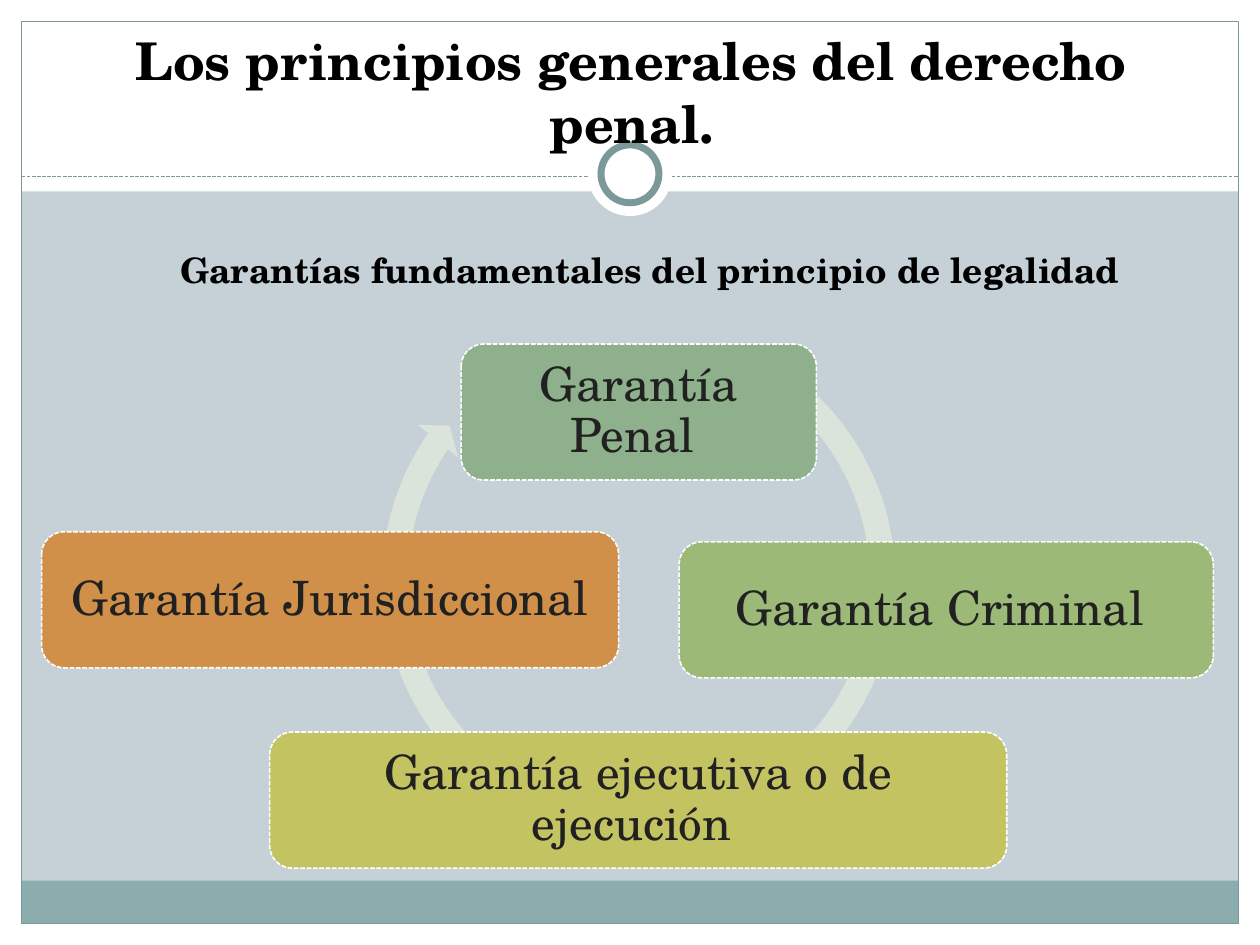
"""Build a slide on the guarantees of the principle of legality in criminal law."""
from pptx import Presentation
from pptx.dml.color import RGBColor
from pptx.enum.dml import MSO_LINE
from pptx.enum.shapes import MSO_CONNECTOR, MSO_SHAPE
from pptx.enum.text import MSO_ANCHOR, PP_ALIGN
from pptx.oxml.ns import qn
from pptx.util import Inches, Pt
from lxml.etree import SubElement

FONT = "TeX Gyre Schola"
WHITE = RGBColor(0xFF, 0xFF, 0xFF)
BLACK = RGBColor(0x00, 0x00, 0x00)
CHARCOAL = RGBColor(0x21, 0x21, 0x21)
BACKGROUND = RGBColor(0xC5, 0xD1, 0xD7)
BAND = RGBColor(0x8C, 0xAD, 0xAE)
FRAME = RGBColor(0x7C, 0x99, 0x9A)
CYCLE = RGBColor(0xDB, 0xE4, 0xDA)
GREEN = RGBColor(0x8F, 0xB0, 0x8C)
LIME = RGBColor(0x9C, 0xB9, 0x77)
OLIVE = RGBColor(0xC4, 0xC3, 0x61)
ORANGE = RGBColor(0xD1, 0x90, 0x49)


class SlideBuilder:
    def __init__(self, slide):
        self.slide = slide
        slide.background.fill.solid()
        slide.background.fill.fore_color.rgb = BACKGROUND

    def stroke(self, line, color, width, dash=None):
        line.color.rgb = color
        line.width = Pt(width)
        if dash:
            line.dash_style = dash

    def shape(self, kind, left, top, width, height, fill=None, line=None, dash=None):
        shape = self.slide.shapes.add_shape(
            kind, Inches(left), Inches(top), Inches(width), Inches(height))
        shape.shadow.inherit = False
        if fill is None:
            shape.fill.background()
        else:
            shape.fill.solid()
            shape.fill.fore_color.rgb = fill
        if line is None:
            shape.line.fill.background()
        else:
            self.stroke(shape.line, *line, dash)
        return shape

    def circle(self, center_x, center_y, diameter, line=None):
        radius = diameter / 2
        self.shape(MSO_SHAPE.OVAL, center_x - radius, center_y - radius,
                   diameter, diameter, WHITE, line)

    def dashed_line(self, left, right, y):
        connector = self.slide.shapes.add_connector(
            MSO_CONNECTOR.STRAIGHT, Inches(left), Inches(y), Inches(right), Inches(y))
        self.stroke(connector.line, FRAME, 0.75, MSO_LINE.SQUARE_DOT)
        SubElement(connector._element.spPr, qn("a:effectLst"))

    def add_text(self, frame, text, size, color, bold=False, anchor=MSO_ANCHOR.TOP):
        frame.word_wrap = True
        frame.vertical_anchor = anchor
        paragraph = frame.paragraphs[0]
        paragraph.alignment = PP_ALIGN.CENTER
        run = paragraph.add_run()
        run.text = text
        run.font.name = FONT
        run.font.size = Pt(size)
        run.font.bold = bold
        run.font.color.rgb = color
        return paragraph

    def heading(self, text, left, top, width, height, size, anchor=MSO_ANCHOR.TOP):
        box = self.slide.shapes.add_textbox(
            Inches(left), Inches(top), Inches(width), Inches(height))
        self.add_text(box.text_frame, text, size, BLACK, True, anchor)

    def guarantee(self, text, left, top, width, fill):
        card = self.shape(MSO_SHAPE.ROUNDED_RECTANGLE, left, top, width, 1.08,
                          fill, (WHITE, 0.9), MSO_LINE.SQUARE_DOT)
        frame = card.text_frame
        frame.margin_left = frame.margin_right = Inches(0.16)
        frame.margin_top = frame.margin_bottom = Inches(0.11)
        paragraph = self.add_text(frame, text, 27, CHARCOAL, anchor=MSO_ANCHOR.MIDDLE)
        paragraph.line_spacing = 0.9

    def cycle_arrow(self, left, top, size):
        arrow = self.shape(MSO_SHAPE.CIRCULAR_ARROW, left, top, size, size, CYCLE)
        for index, value in enumerate((0.047, 2.729, 128.746, 180.014, 0.048)):
            arrow.adjustments[index] = value


def main():
    presentation = Presentation()
    presentation.slide_width = Inches(10)
    presentation.slide_height = Inches(7.5)
    builder = SlideBuilder(presentation.slides.add_slide(presentation.slide_layouts[6]))

    for border in ((0, 7.33, 10, 0.17), (0, 0, 10, 1.52),
                   (0, 0, 0.17, 7.5), (9.83, 0, 0.17, 7.5)):
        builder.shape(MSO_SHAPE.RECTANGLE, *border, WHITE)
    builder.shape(MSO_SHAPE.RECTANGLE, 0.17, 6.99, 9.66, 0.34, BAND)
    builder.shape(MSO_SHAPE.RECTANGLE, 0.17, 0.17, 9.66, 7.16, line=(FRAME, 0.75))
    builder.dashed_line(0.17, 9.83, 1.4)
    builder.circle(5, 1.38, 0.67)
    builder.circle(5, 1.38, 0.46, (FRAME, 4))
    builder.heading("Los principios generales del derecho penal.",
                    0.35, 0.44, 9.33, 0.83, 29.7, MSO_ANCHOR.BOTTOM)

    builder.cycle_arrow(2.93, 2.46, 4.28)
    for guarantee in (
        ("Garantía Penal ", 3.66, 2.73, 2.82, GREEN),
        ("Garantía Criminal ", 5.39, 4.3, 4.24, LIME),
        ("Garantía ejecutiva o de ejecución ", 2.14, 5.81, 5.85, OLIVE),
        ("Garantía Jurisdiccional", 0.33, 4.22, 4.58, ORANGE),
    ):
        builder.guarantee(*guarantee)
    builder.heading("Garantías fundamentales del principio de legalidad",
                    0.75, 1.92, 8.82, 0.44, 20)

    presentation.save("out.pptx")


if __name__ == "__main__":
    main()
